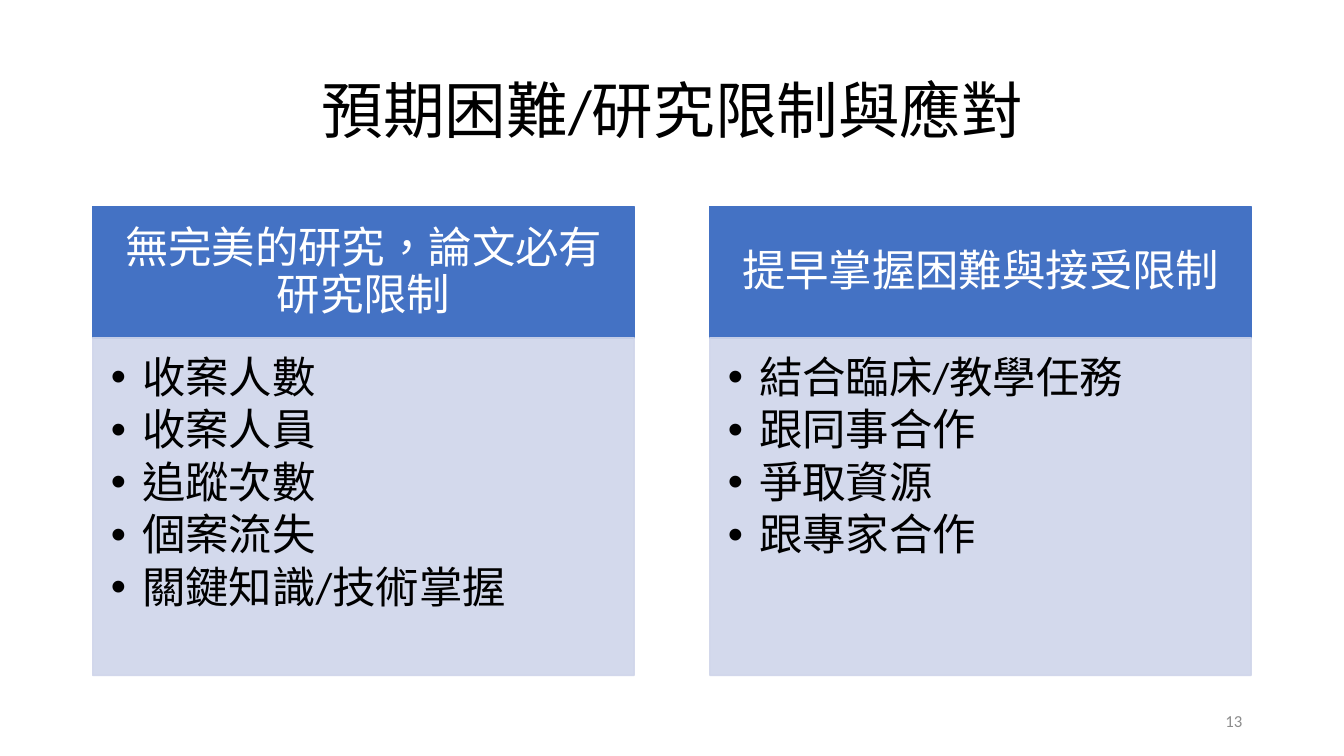
from lxml.etree import SubElement as Sub
from pptx import Presentation
from pptx.dml.color import RGBColor as Rgb
from pptx.enum.shapes import MSO_SHAPE as Form
from pptx.enum.text import MSO_ANCHOR as Anchor, MSO_AUTO_SIZE as Fit, PP_ALIGN as Align
from pptx.oxml.ns import qn
from pptx.util import Inches, Pt

HUES = {"ink": "000000", "head": "4472C4", "body": "CFD5EA",
        "white": "FFFFFF", "gray": "8C8C8C"}
COLS = [
    ("無完美的研究，論文必有研究限制",
     ["收案人數", "收案人員", "追蹤次數", "個案流失", "關鍵知識/技術掌握"]),
    ("提早掌握困難與接受限制",
     ["結合臨床/教學任務", "跟同事合作", "爭取資源", "跟專家合作"]),
]
LEFT, STEP, WIDE = 0.92, 6.12, 5.37
SIDES = ("margin_left", "margin_top", "margin_right", "margin_bottom")


def apply(item, form):
    for key, val in form.items():
        setattr(item, key, val)


class Page:
    face = "Calibri"

    def __init__(self, deck):
        self.slide = deck.slides.add_slide(deck.slide_layouts[5])

    def place(self, shape, box):
        apply(shape, dict(zip(("left", "top", "width", "height"), map(Inches, box))))

    def label(self, shape, lines, size, hue, form, anchor=Anchor.MIDDLE,
              pads=(0.1, 0.05, 0.1, 0.05), dots=False):
        frame = shape.text_frame
        apply(frame, {"word_wrap": True, "auto_size": Fit.NONE, "vertical_anchor": anchor})
        apply(frame, dict(zip(SIDES, map(Inches, pads))))
        frame.text = "\n".join(lines)
        for para in frame.paragraphs:
            apply(para, form)
            for run in para.runs:
                apply(run.font, {"name": self.face, "size": Pt(size)})
                run.font.color.rgb = Rgb.from_string(HUES[hue])
                run.font._element.set("lang", "zh-TW")
            if dots:
                self.dot(para)

    def dot(self, para):
        props = para._p.get_or_add_pPr()
        props.set("marL", str(Inches(0.31)))
        props.set("indent", str(Inches(-0.31)))
        Sub(props, qn("a:buFont")).set("typeface", "Arial")
        Sub(props, qn("a:buChar")).set("char", "•")

    def title(self, text, box):
        shape = self.slide.shapes.title
        self.place(shape, box)
        self.label(shape, [text], 44, "ink", {"alignment": Align.CENTER, "line_spacing": 0.9})

    def panel(self, box, hue, alpha=100):
        shape = self.slide.shapes.add_shape(Form.RECTANGLE, *map(Inches, box))
        shape.shadow.inherit = False
        shape.line.width = Pt(1)
        for fill in (shape.fill, shape.line.fill):
            fill.solid()
            fill.fore_color.rgb = Rgb.from_string(HUES[hue])
        if alpha < 100:
            for tint in shape._element.spPr.iter(qn("a:srgbClr")):
                Sub(tint, qn("a:alpha")).set("val", str(alpha * 1000))
        return shape

    def head(self, text, box):
        self.label(self.panel(box, "head"), [text], 31, "white",
                   {"alignment": Align.CENTER, "line_spacing": 0.9},
                   pads=(0.24, 0.14, 0.24, 0.14))

    def list(self, lines, box):
        self.label(self.panel(box, "body", 90), lines, 31, "ink",
                   {"alignment": Align.LEFT, "line_spacing": 0.9, "space_after": Pt(4)},
                   Anchor.TOP, (0.18, 0.18, 0.24, 0.27), True)

    def number(self, text, box):
        shape = self.slide.shapes.add_textbox(*map(Inches, box))
        self.label(shape, [text], 12, "gray", {"alignment": Align.RIGHT})


def main():
    deck = Presentation()
    apply(deck, {"slide_width": Inches(13.33), "slide_height": Inches(7.5)})
    page = Page(deck)
    page.title("預期困難/研究限制與應對", (LEFT, 0.4, 11.5, 1.45))
    for i, (name, lines) in enumerate(COLS):
        x = LEFT + i * STEP
        page.head(name, (x, 2.05, WIDE, 1.31))
        page.list(lines, (x, 3.35, WIDE, 3.35))
    page.number("13", (9.42, 6.95, 3, 0.4))
    deck.save("out.pptx")


if __name__ == "__main__":
    main()
